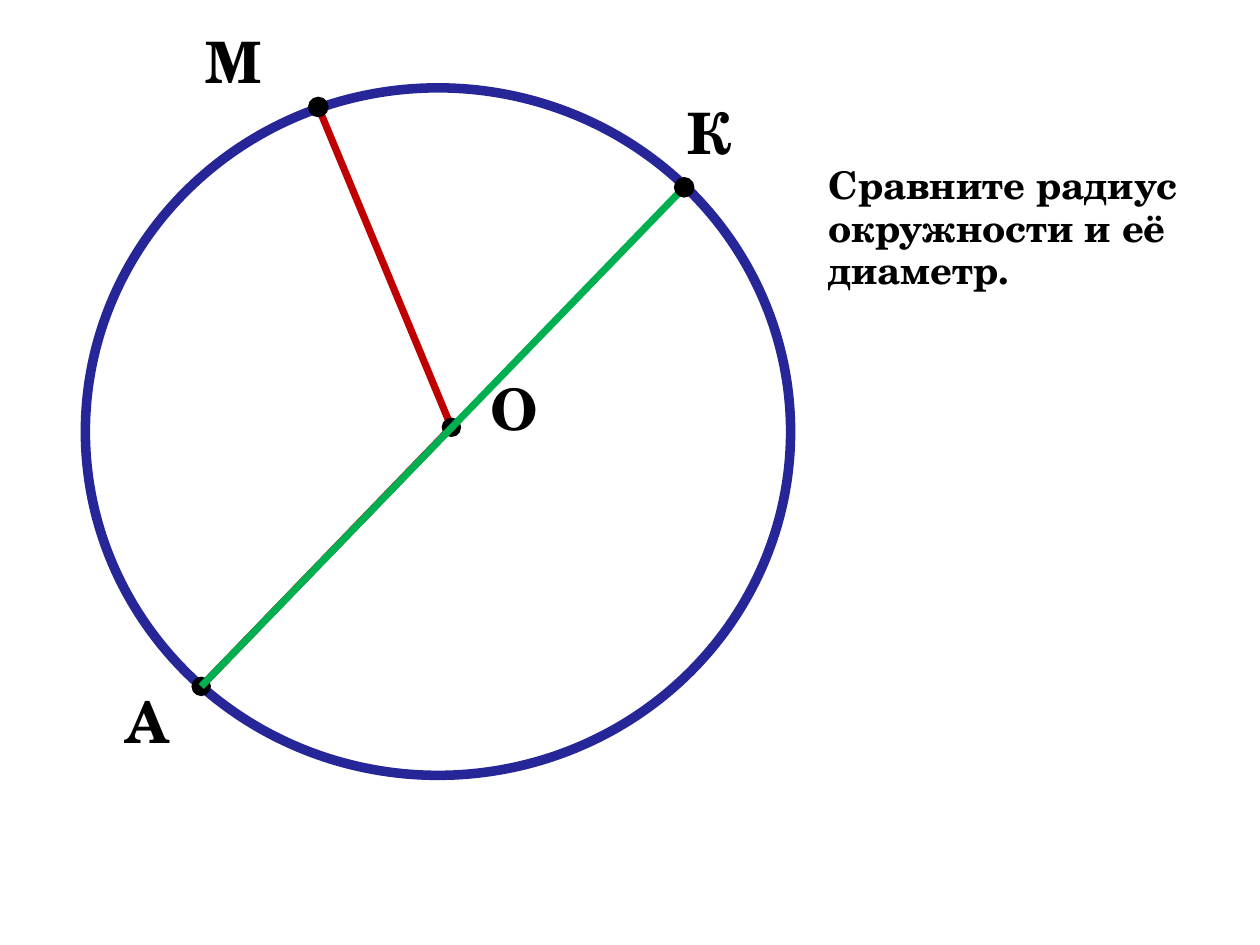
import dataclasses

import pptx
import pptx.dml.color
import pptx.enum.shapes
import pptx.enum.text
import pptx.oxml
import pptx.oxml.ns
import pptx.presentation
import pptx.shapes.autoshape
import pptx.slide
import pptx.util

SLIDE_W = pptx.util.Cm(28)
SLIDE_H = pptx.util.Cm(21)


@dataclasses.dataclass(frozen=True)
class Theme:
    font: str = "TeX Gyre Schola"
    ink: str = "000000"
    circle: str = "262699"
    radius: str = "C00000"
    diameter: str = "00B050"
    label_size: float = 36
    task_size: float = 24
    segment_width: float = 4.5
    circle_width: float = 6
    dot_width: float = 0.75
    line_spacing: float = 0.93


@dataclasses.dataclass(frozen=True)
class Box:
    left: float
    top: float
    width: float
    height: float


@dataclasses.dataclass(frozen=True)
class Point:
    name: str
    x: float
    y: float
    dot: float
    label: Box


THEME = Theme()
LABEL_H = 8.22
M = Point("М", 25.26, 11.32, 1.54, Box(15.3, 2.68, 6.26, LABEL_H))
A = Point("А", 15.97, 72.64, 1.45, Box(8.89, 72.58, 5.54, LABEL_H))
O = Point("О", 35.83, 45.22, 1.45, Box(37.92, 39.45, 4.72, LABEL_H))
K = Point("К", 54.3, 19.82, 1.54, Box(53.52, 10.19, 5.54, LABEL_H))
CIRCLE = Box(6.78, 9.3, 55.97, 72.75)
TASK = Box(64.86, 16.93, 31.21, 14.87)


def across(share: float) -> int:
    return round(SLIDE_W * share / 100)


def down(share: float) -> int:
    return round(SLIDE_H * share / 100)


def rgb(color: str) -> pptx.dml.color.RGBColor:
    return pptx.dml.color.RGBColor.from_string(color)


def add_segment(slide: pptx.slide.Slide, start: Point, end: Point, color: str) -> None:
    line = slide.shapes.add_connector(
        pptx.enum.shapes.MSO_CONNECTOR.STRAIGHT,
        across(start.x), down(start.y), across(end.x), down(end.y),
    )
    line.line.color.rgb = rgb(color)
    line.line.width = pptx.util.Pt(THEME.segment_width)
    sp_pr = line._element.spPr
    sp_pr.append(pptx.oxml.parse_xml(f"<a:effectLst {pptx.oxml.ns.nsdecls('a')}/>"))


def add_ellipse(
    slide: pptx.slide.Slide, left: int, top: int, width: int, height: int,
    color: str, weight: float,
) -> pptx.shapes.autoshape.Shape:
    sp = slide.shapes.add_shape(
        pptx.enum.shapes.MSO_SHAPE.OVAL, left, top, width, height
    )
    sp.shadow.inherit = False
    sp.fill.background()
    sp.line.color.rgb = rgb(color)
    sp.line.width = pptx.util.Pt(weight)
    return sp


def add_circle(slide: pptx.slide.Slide, box: Box) -> None:
    add_ellipse(
        slide, across(box.left), down(box.top), across(box.width), down(box.height),
        THEME.circle, THEME.circle_width,
    )


def add_dot(slide: pptx.slide.Slide, point: Point) -> None:
    size = across(point.dot)
    sp = add_ellipse(
        slide, across(point.x) - size // 2, down(point.y) - size // 2, size, size,
        THEME.ink, THEME.dot_width,
    )
    sp.fill.solid()
    sp.fill.fore_color.rgb = rgb(THEME.ink)


def add_text(
    slide: pptx.slide.Slide, box: Box, text: str, size: float,
    align: pptx.enum.text.PP_ALIGN,
) -> pptx.shapes.autoshape.Shape:
    sp = slide.shapes.add_textbox(
        across(box.left), down(box.top), across(box.width), down(box.height)
    )
    tf = sp.text_frame
    tf.word_wrap = True
    tf.auto_size = pptx.enum.text.MSO_AUTO_SIZE.SHAPE_TO_FIT_TEXT
    p = tf.paragraphs[0]
    p.alignment = align
    p.line_spacing = THEME.line_spacing
    r = p.add_run()
    r.text = text
    r.font.name = THEME.font
    r.font.size = pptx.util.Pt(size)
    r.font.bold = True
    r.font.color.rgb = rgb(THEME.ink)
    return sp


def add_label(slide: pptx.slide.Slide, point: Point) -> None:
    sp = add_text(
        slide, point.label, point.name, THEME.label_size,
        pptx.enum.text.PP_ALIGN.CENTER,
    )
    tf = sp.text_frame
    tf.margin_left = tf.margin_right = across(1)
    tf.margin_top = tf.margin_bottom = down(0.73)


def build() -> pptx.presentation.Presentation:
    prs = pptx.Presentation()
    prs.slide_width, prs.slide_height = SLIDE_W, SLIDE_H
    slide = prs.slides.add_slide(prs.slide_layouts.get_by_name("Blank"))

    for end in (M, A):
        add_segment(slide, O, end, THEME.radius)
    add_dot(slide, O)
    add_circle(slide, CIRCLE)
    for point in (M, A):
        add_dot(slide, point)
    add_segment(slide, K, A, THEME.diameter)
    add_dot(slide, K)
    for point in (M, A, O, K):
        add_label(slide, point)
    add_text(
        slide, TASK, "Сравните радиус окружности и её диаметр.",
        THEME.task_size, pptx.enum.text.PP_ALIGN.LEFT,
    )
    return prs


if __name__ == "__main__":
    build().save("out.pptx")
